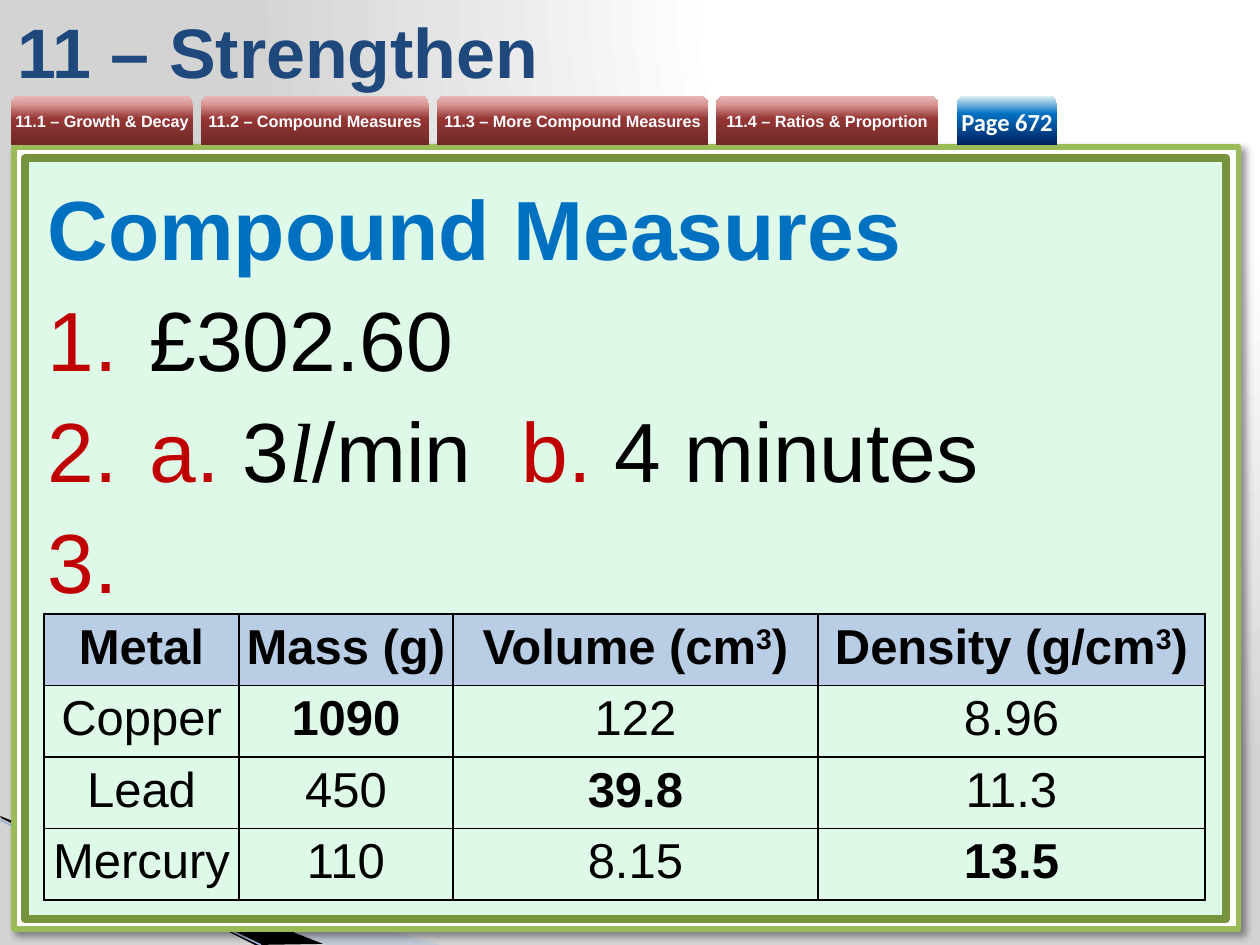
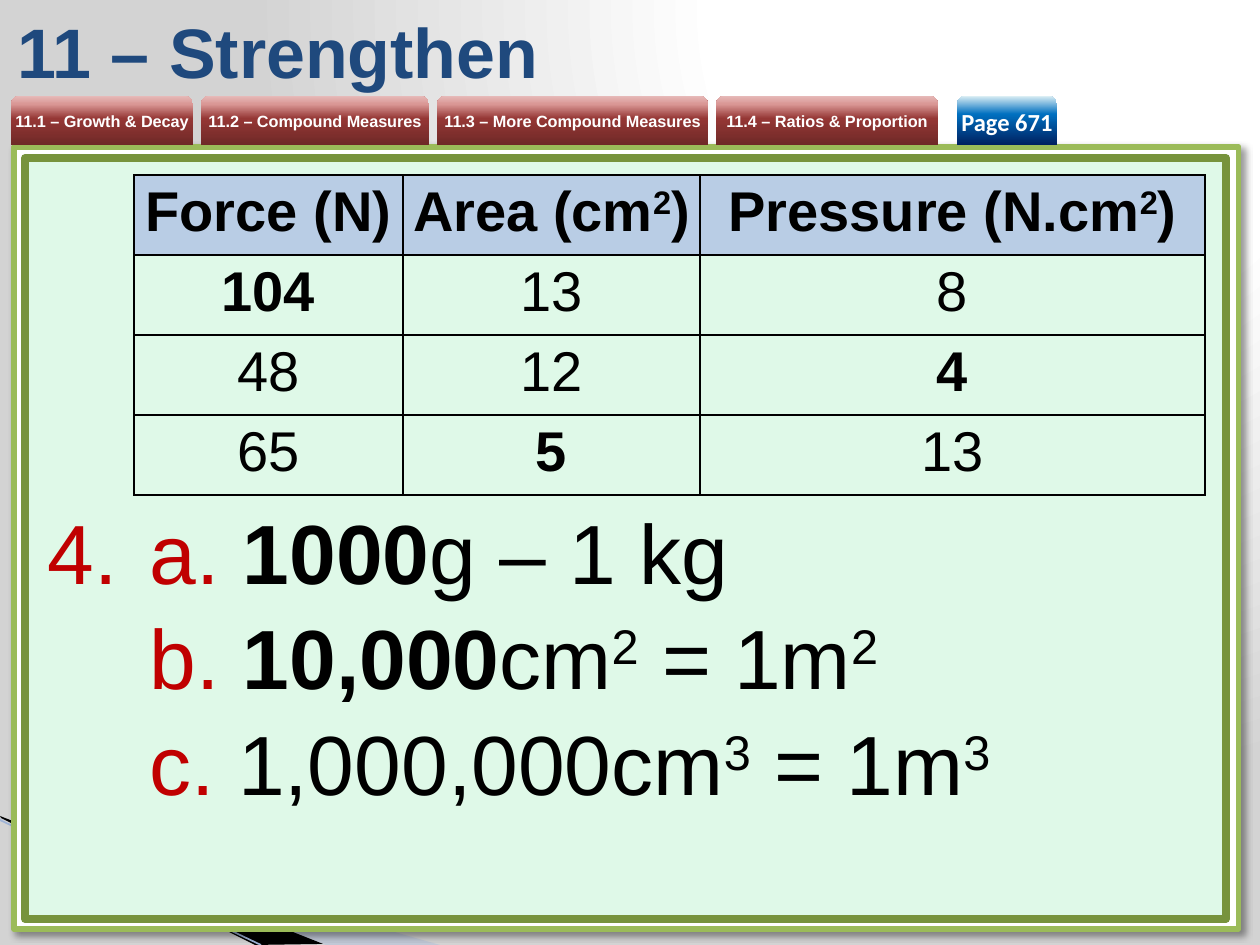
"""Build two answer slides on compound measures."""
from dataclasses import dataclass

from lxml import etree
from pptx import Presentation
from pptx.dml.color import RGBColor
from pptx.enum.shapes import MSO_CONNECTOR, MSO_SHAPE
from pptx.enum.text import MSO_ANCHOR, MSO_AUTO_SIZE, PP_ALIGN
from pptx.oxml import parse_xml
from pptx.oxml.ns import nsdecls, qn
from pptx.util import Pt

PX = 914400 / 126
RECTANGLE = MSO_SHAPE.RECTANGLE
TAB = MSO_SHAPE.ROUND_2_SAME_RECTANGLE
STRAIGHT = MSO_CONNECTOR.STRAIGHT
LEFT, CENTER = PP_ALIGN.LEFT, PP_ALIGN.CENTER
MIDDLE = MSO_ANCHOR.MIDDLE
NO_FIT = MSO_AUTO_SIZE.NONE


@dataclass(frozen=True)
class Theme:
    font: str = "Arial"
    page_font: str = "Calibri"
    unit_font: str = "Times New Roman"
    ink: str = "000000"
    paper: str = "FFFFFF"
    title: str = "1F497D"
    heading: str = "0070C0"
    label: str = "C00000"
    frame_line: str = "9BBB59"
    panel: str = "DFF9E8"
    panel_line: str = "77933C"
    header: str = "B9CDE5"
    swoosh: str = "A7B9DB"
    swoosh_line: str = "9EB3D6"
    title_size: float = 40
    body_size: float = 48
    page_size: float = 14
    tab_size: float = 9.3
    backdrop: tuple = ((0, "FFFFFF"), (40, "FFFFFF"), (100, "D3D3D3"))
    red_tab: tuple = ((0, "6F2927"), (54, "953735"), (83, "D99694"), (100, "E6B9B8"))
    blue_tab: tuple = ((0, "002060"), (63, "0070C0"), (100, "DBEEF4"))


THEME = Theme()


def write(para, text, size=THEME.body_size, color=THEME.ink, font=THEME.font, bold=False, italic=False):
    """Add text to a paragraph; parts between carets are superscript."""
    for index, piece in enumerate(text.split("^")):
        if piece:
            span = para.add_run()
            span.text = piece
            span.font.size, span.font.name = Pt(size), font
            span.font.bold, span.font.italic = bold, italic
            span.font.color.rgb = RGBColor.from_string(color)
            if index % 2:
                span.font._element.set("baseline", "30000")


def gradient(stops, direction):
    """Return a gradient fill element."""
    marks = "".join(
        f'<a:gs pos="{pos * 1000}"><a:srgbClr val="{color}"/></a:gs>' for pos, color in stops
    )
    return parse_xml(
        f'<a:gradFill {nsdecls("a")} rotWithShape="1"><a:gsLst>{marks}</a:gsLst>{direction}</a:gradFill>'
    )


UPWARD = '<a:lin ang="16200000" scaled="0"/>'
CORNER = '<a:path path="circle"><a:fillToRect l="65000" b="98000"/></a:path>'
TAB_TOP, TAB_HEIGHT, TAB_GAP = 96, 49, 8
TOPICS = [
    ("11.1 – Growth & Decay", 182),
    ("11.2 – Compound Measures", 228),
    ("11.3 – More Compound Measures", 271),
    ("11.4 – Ratios & Proportion", 222),
]
SWOOSHES = [
    (THEME.swoosh, 40, [(0, 819), (440, 945), (326, 945), (0, 818)]),
    (THEME.ink, 100, [(0, 816), (323, 944), (255, 945), (1, 818)]),
]
FRAMES = [
    ((14, 147, 1225, 782), THEME.paper, THEME.frame_line, 3),
    ((25, 158, 1201, 761), THEME.panel, THEME.panel_line, 4.33),
]
RED = {"color": THEME.label}
BOLD = {"bold": True}
PAGES = [
    {
        "number": "Page 672",
        "body": (35, 165, 1181, 436),
        "start": 1,
        "lines": [
            ("heading", [("Compound Measures", {"color": THEME.heading, "bold": True})]),
            ("number", [("£302.60", {})]),
            ("number", [("a.", RED), (" 3", {}), ("l", {"font": THEME.unit_font, "italic": True}),
                        ("/min\t", {}), ("b.", RED), (" 4 minutes", {})]),
            ("number", [(" ", {})]),
        ],
        "table_at": (44, 614),
        "table_size": 28,
        "columns": [195, 214, 365, 387],
        "row_height": 71.5,
        "rows": [
            ["Metal", "Mass (g)", "Volume (cm^3^)", "Density (g/cm^3^)"],
            ["Copper", "1090", "122", "8.96"],
            ["Lead", "450", "39.8", "11.3"],
            ["Mercury", "110", "8.15", "13.5"],
        ],
        "answers": {(1, 1), (2, 2), (3, 3)},
    },
    {
        "number": "Page 671",
        "body": (35, 489, 1181, 330),
        "start": 4,
        "lines": [
            ("number", [("a. ", RED), ("1000", BOLD), ("g – 1 kg", {})]),
            ("part", [("b. ", RED), ("10,000", BOLD), ("cm^2^ = 1m^2^", {})]),
            ("part", [("c.", RED), (" 1,000,000cm^3^ = 1m^3^", {})]),
        ],
        "table_at": (134, 175),
        "table_size": 32,
        "columns": [269, 297, 505],
        "row_height": 80,
        "rows": [
            ["Force (N)", "Area (cm^2^)", "Pressure (N.cm^2^)"],
            ["104", "13", "8"],
            ["48", "12", "4"],
            ["65", "5", "13"],
        ],
        "answers": {(1, 0), (2, 2), (3, 1)},
    },
]

deck = Presentation()
deck.slide_width, deck.slide_height = round(1260 * PX), round(945 * PX)
deck.slide_master.background.fill.solid()
backdrop = deck.slide_master._element.xpath(".//p:bgPr")[0]
backdrop.replace(backdrop[0], gradient(THEME.backdrop, CORNER))

for content in PAGES:
    page = deck.slides.add_slide(deck.slide_layouts[5])
    shapes = page.shapes

    title = shapes.title
    title.left, title.top, title.width, title.height = [round(v * PX) for v in (5, 6, 1062, 89)]
    title.text_frame.auto_size = NO_FIT
    title.text_frame.vertical_anchor = MIDDLE
    para = title.text_frame.paragraphs[0]
    para.alignment = LEFT
    write(para, "11 – Strengthen", size=THEME.title_size, color=THEME.title, bold=True)

    for color, opacity, points in SWOOSHES:
        builder = shapes.build_freeform(*points[0], scale=PX)
        builder.add_line_segments(points[1:], close=True)
        swoosh = builder.convert_to_shape()
        swoosh.shadow.inherit = False
        swoosh.fill.solid()
        swoosh.fill.fore_color.rgb = RGBColor.from_string(color)
        tint = swoosh._element.xpath("./p:spPr/a:solidFill/a:srgbClr")[0]
        etree.SubElement(tint, qn("a:alpha"), val=str(opacity * 1000))
        swoosh.line.fill.background()

    edge = shapes.add_connector(STRAIGHT, *[round(v * PX) for v in (0, 820, 261, 945)])
    edge.line.color.rgb = RGBColor.from_string(THEME.swoosh_line)
    edge.line.width = Pt(0.95)
    etree.SubElement(edge._element.spPr, qn("a:effectLst"))

    for area, fill, line, weight in FRAMES:
        frame = shapes.add_shape(RECTANGLE, *[round(v * PX) for v in area])
        frame.shadow.inherit = False
        frame.fill.solid()
        frame.fill.fore_color.rgb = RGBColor.from_string(fill)
        frame.line.color.rgb = RGBColor.from_string(line)
        frame.line.width = Pt(weight)
        if fill == THEME.paper:
            effects = frame._element.spPr.find(qn("a:effectLst"))
            effects.append(parse_xml(
                f'<a:outerShdw {nsdecls("a")} blurRad="50800" dist="38100" dir="2700000" algn="tl" '
                'rotWithShape="0"><a:srgbClr val="000000"><a:alpha val="40000"/></a:srgbClr></a:outerShdw>'
            ))

    tabs = []
    left = 11
    for text, width in TOPICS:
        tabs.append((text, left, width, THEME.red_tab, THEME.tab_size, THEME.font, Pt(10)))
        left += width + TAB_GAP
    tabs.append((content["number"], 957, 100, THEME.blue_tab, THEME.page_size, THEME.page_font, None))
    for text, left, width, stops, size, font, spacing in tabs:
        tab = shapes.add_shape(TAB, *[round(v * PX) for v in (left, TAB_TOP, width, TAB_HEIGHT)])
        tab.shadow.inherit = False
        tab.line.fill.background()
        tab._element.spPr.insert(2, gradient(stops, UPWARD))
        frame = tab.text_frame
        frame.margin_left = frame.margin_right = frame.margin_top = frame.margin_bottom = 0
        frame.word_wrap = False
        frame.vertical_anchor = MIDDLE
        para = frame.paragraphs[0]
        para.alignment = CENTER
        para.line_spacing = spacing
        write(para, text, size=size, color=THEME.paper, font=font, bold=True)

    box = shapes.add_textbox(*[round(v * PX) for v in content["body"]])
    box.text_frame.word_wrap = True
    for index, (kind, spans) in enumerate(content["lines"]):
        para = box.text_frame.add_paragraph() if index else box.text_frame.paragraphs[0]
        para.line_spacing = 1.05
        para.space_after = Pt(3 if content["start"] == 1 else 0)
        props = para._p.get_or_add_pPr()
        if kind != "heading":
            props.set("marL", str(round(102 * PX)))
        if kind == "number":
            props.set("indent", str(round(-102 * PX)))
            bullet = etree.SubElement(props, qn("a:buClr"))
            etree.SubElement(bullet, qn("a:srgbClr"), val=THEME.label)
            etree.SubElement(props, qn("a:buAutoNum"), type="arabicPeriod", startAt=str(content["start"]))
            stops = etree.SubElement(props, qn("a:tabLst"))
            etree.SubElement(stops, qn("a:tab"), pos=str(round(474 * PX)), algn="l")
        for text, style in spans:
            write(para, text, **style)

    rows, columns = content["rows"], content["columns"]
    area = (*content["table_at"], sum(columns), content["row_height"] * len(rows))
    table = shapes.add_table(len(rows), len(columns), *[round(v * PX) for v in area]).table
    table.first_row = table.horz_banding = False
    for column, width in zip(table.columns, columns):
        column.width = round(width * PX)
    for r, row in enumerate(rows):
        for c, text in enumerate(row):
            cell = table.cell(r, c)
            cell.margin_left = cell.margin_right = cell.margin_top = cell.margin_bottom = round(6 * PX)
            if r == 0:
                cell.fill.solid()
                cell.fill.fore_color.rgb = RGBColor.from_string(THEME.header)
            else:
                cell.fill.background()
            for position, side in enumerate(("lnL", "lnR", "lnT", "lnB")):
                cell._tc.tcPr.insert(position, parse_xml(
                    f'<a:{side} {nsdecls("a")} w="12700"><a:solidFill>'
                    f'<a:srgbClr val="{THEME.ink}"/></a:solidFill></a:{side}>'
                ))
            para = cell.text_frame.paragraphs[0]
            para.alignment = CENTER
            write(para, text, size=content["table_size"], bold=r == 0 or (r, c) in content["answers"])

deck.save("out.pptx")
